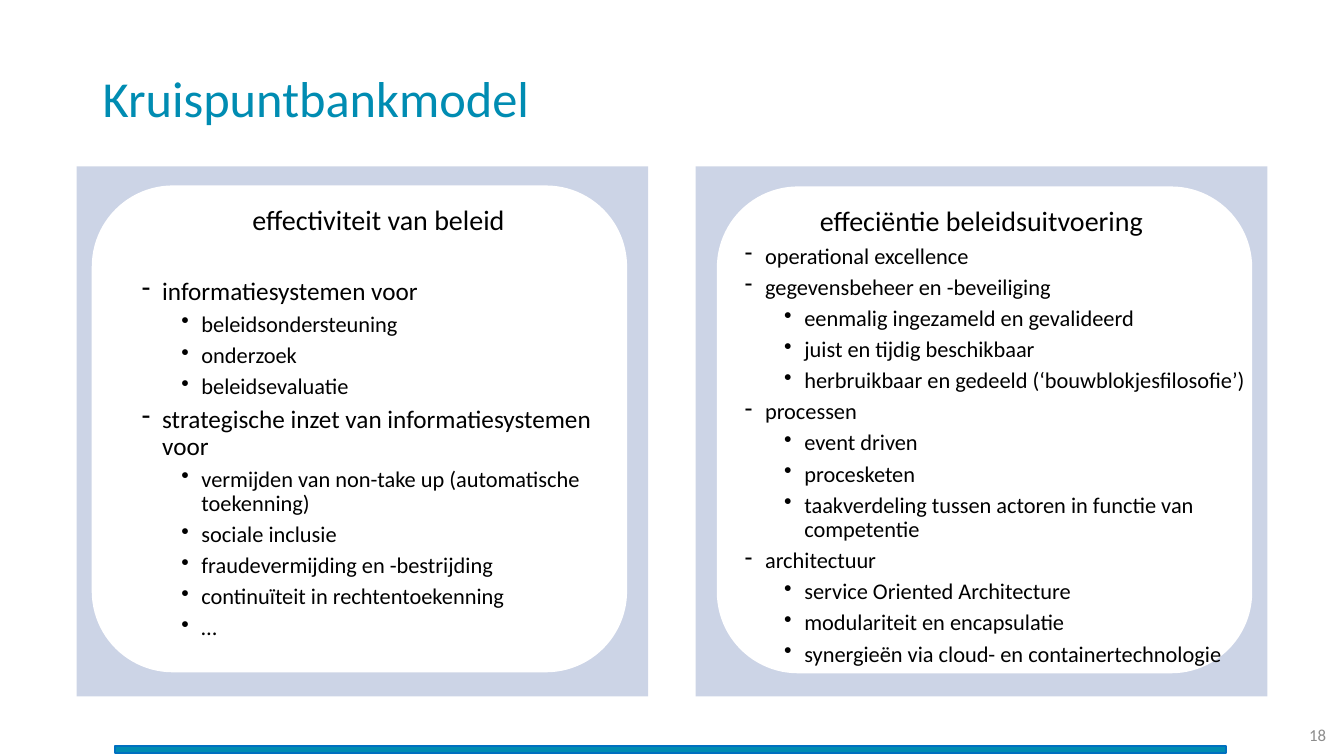
import pptx
import pptx.dml.color
import pptx.enum.shapes
import pptx.enum.text
import pptx.oxml
import pptx.oxml.ns
import pptx.util
import lxml.etree

WIDTH, HEIGHT = 13.33, 7.5
COLORS = {"accent": "008CB2", "edge": "0070C0", "panel": "002B82",
          "card": "FFFFFF", "text": "000000", "number": "8C8C8C"}
SHAPES = pptx.enum.shapes.MSO_SHAPE
ALIGN = pptx.enum.text.PP_ALIGN
ANCHOR = pptx.enum.text.MSO_ANCHOR
BULLETS = {1: ("-", 0.59), 2: ("•", 0.98)}
HANGING = 0.2

POLICY = {
    "heading": "effectiviteit van beleid", "sizes": {1: 18, 2: 16}, "gap": 30,
    "card": (0.15, 0.19), "body": (0.16, 0.35),
    "items": [
        (1, "informatiesystemen voor"),
        (2, "beleidsondersteuning"),
        (2, "onderzoek"),
        (2, "beleidsevaluatie"),
        (1, "strategische inzet van informatiesystemen \vvoor"),
        (2, "vermijden van non-take up (automatische toekenning)"),
        (2, "sociale inclusie"),
        (2, "fraudevermijding en -bestrijding"),
        (2, "continuïteit in rechtentoekenning"),
        (2, "…"),
    ],
}
EXECUTION = {
    "heading": "effeciëntie beleidsuitvoering", "sizes": {1: 16, 2: 16}, "gap": 5,
    "card": (0.21, 0.2), "body": (0, 0.36),
    "items": [
        (1, "operational excellence"),
        (1, "gegevensbeheer en -beveiliging"),
        (2, "eenmalig ingezameld en gevalideerd"),
        (2, "juist en tijdig beschikbaar"),
        (2, "herbruikbaar en gedeeld (‘bouwblokjesfilosofie’)"),
        (1, "processen"),
        (2, "event driven"),
        (2, "procesketen"),
        (2, "taakverdeling tussen actoren in functie van competentie"),
        (1, "architectuur"),
        (2, "service Oriented Architecture"),
        (2, "modulariteit en encapsulatie"),
        (2, "synergieën via cloud- en containertechnologie"),
    ],
}


def apply_format(target, values):
    """Set every attribute named in a dict of format values."""
    for name, value in values.items():
        setattr(target, name, value)


def inches(box):
    """Turn a box of left, top, width and height into lengths."""
    return [pptx.util.Inches(length) for length in box]


def add_block(page, box, kind, color, edge=None, opacity=None):
    """Draw a filled preset shape in the given box."""
    block = page.shapes.add_shape(kind, *inches(box))
    block.shadow.inherit = False
    block.fill.solid()
    block.fill.fore_color.rgb = pptx.dml.color.RGBColor.from_string(COLORS[color])
    if edge:
        block.line.color.rgb = pptx.dml.color.RGBColor.from_string(COLORS[edge])
        block.line.width = pptx.util.Pt(1)
    else:
        block.line.fill.background()
    if opacity:
        tone = block.fill._xPr.find(".//" + pptx.oxml.ns.qn("a:srgbClr"))
        alpha = lxml.etree.SubElement(tone, pptx.oxml.ns.qn("a:alpha"))
        alpha.set("val", str(opacity * 1000))


def add_frame(page, box, anchor):
    """Add a wrapping text box and return its text frame."""
    frame = page.shapes.add_textbox(*inches(box)).text_frame
    apply_format(frame, {"word_wrap": True, "vertical_anchor": anchor})
    return frame


def write_para(para, text, size, color, **values):
    """Fill a paragraph with text in one style."""
    para.text = text
    apply_format(para, values)
    for span in para.runs:
        apply_format(span.font, {"name": "Calibri", "size": pptx.util.Pt(size)})
        span.font.color.rgb = pptx.dml.color.RGBColor.from_string(COLORS[color])


def add_bullet(para, level):
    """Give a paragraph the bullet and hanging indent of its level."""
    mark, indent = BULLETS[level]
    settings = para._p.get_or_add_pPr()
    settings.set("marL", str(pptx.util.Inches(indent)))
    settings.set("indent", str(-pptx.util.Inches(HANGING)))
    bullet = lxml.etree.SubElement(settings, pptx.oxml.ns.qn("a:buChar"))
    bullet.set("char", mark)


def add_panel(page, box, content):
    """Place a tinted panel with a rounded card, a heading and a list."""
    left, top, width, height = box
    card_x, card_y = content["card"]
    body_x, body_y = content["body"]
    add_block(page, box, SHAPES.RECTANGLE, "panel", opacity=20)
    add_block(page, (left + card_x, top + card_y, width - 0.36, height - 0.43),
              SHAPES.ROUNDED_RECTANGLE, "card")
    frame = add_frame(page, (left + body_x, top + body_y, width, height - 0.5), ANCHOR.TOP)
    write_para(frame.paragraphs[0], content["heading"], 20, "text",
               alignment=ALIGN.CENTER, line_spacing=0.9, space_before=pptx.util.Pt(10))
    for index, (level, text) in enumerate(content["items"]):
        para = frame.add_paragraph()
        space = 5 if index else content["gap"]
        write_para(para, text, content["sizes"][level], "text", level=level,
                   line_spacing=0.9, space_before=pptx.util.Pt(space))
        add_bullet(para, level)


def add_title(page, box):
    """Write the slide title in its box."""
    frame = add_frame(page, box, ANCHOR.MIDDLE)
    write_para(frame.paragraphs[0], "Kruispuntbankmodel", 36, "accent", line_spacing=0.9)


def add_footer(page, box):
    """Draw the bottom bar and the slide number within a strip."""
    left, top, width, height = box
    add_block(page, (left, top + 0.31, 11.02, 0.07), SHAPES.RECTANGLE, "accent", edge="edge")
    frame = add_frame(page, (left + width - 0.82, top, 0.82, height), ANCHOR.MIDDLE)
    write_para(frame.paragraphs[0], "18", 12, "number", alignment=ALIGN.RIGHT)


def main():
    """Build the slide and save the deck."""
    deck = pptx.Presentation()
    apply_format(deck, {"slide_width": pptx.util.Inches(WIDTH),
                        "slide_height": pptx.util.Inches(HEIGHT)})
    page = deck.slides.add_slide(deck.slide_layouts[6])
    add_footer(page, (1.14, 7.09, 12.11, 0.4))
    add_title(page, (0.92, 0.28, 11.5, 1.45))
    for column, content in enumerate((POLICY, EXECUTION)):
        add_panel(page, (0.76 + column * 6.14, 1.65, 5.67, 5.26), content)
    deck.save("out.pptx")


if __name__ == "__main__":
    main()
